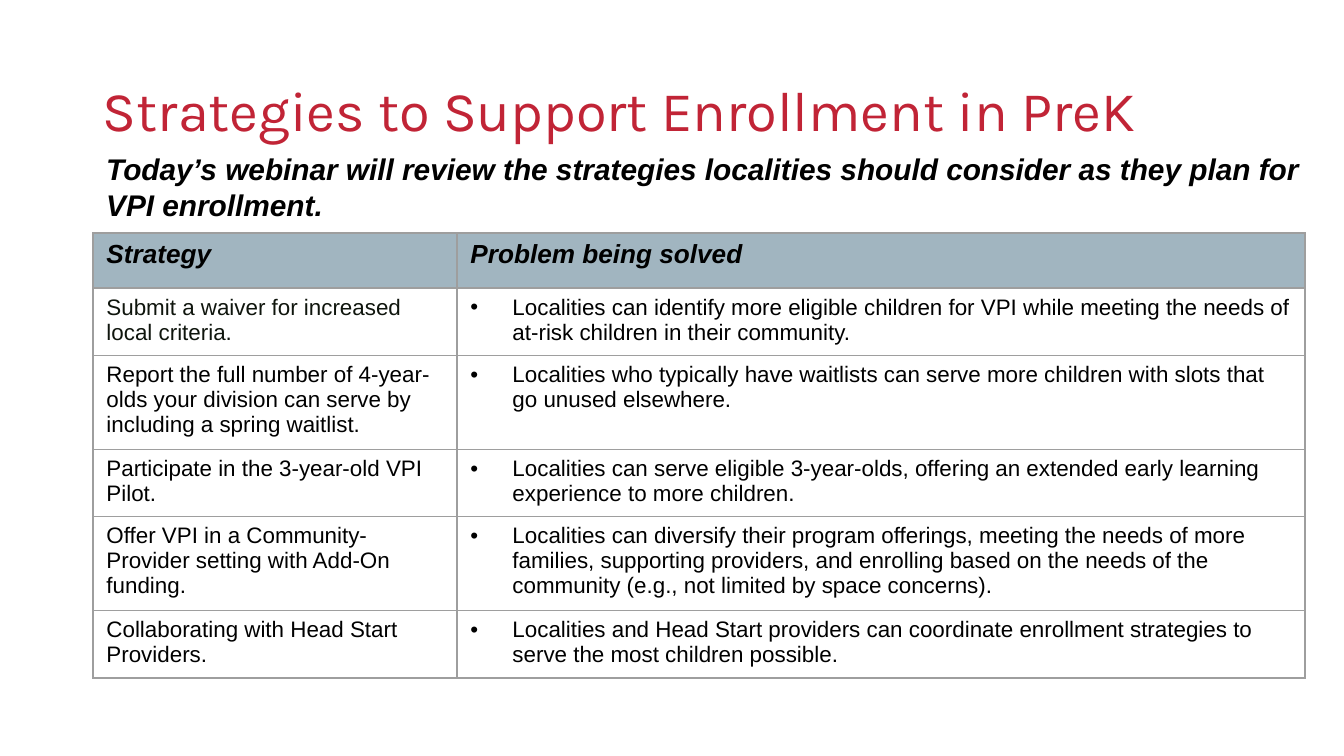
"""Build the slide on strategies to support PreK enrollment."""
import pptx
import pptx.dml.color
import pptx.enum.text
import pptx.oxml
import pptx.oxml.ns
import pptx.util

TITLE = "Strategies to Support Enrollment in PreK"
INTRO = (
    "Today’s webinar will review the strategies localities should consider "
    "as they plan for VPI enrollment."
)
HEADERS = ("Strategy", "Problem being solved")
STRATEGIES = [
    ("Submit a waiver for increased local criteria.",
     "Localities can identify more eligible children for VPI while meeting "
     "the needs of at-risk children in their community."),
    ("Report the full number of 4-year-olds your division can serve by "
     "including a spring waitlist.",
     "Localities who typically have waitlists can serve more children with "
     "slots that go unused elsewhere."),
    ("Participate in the 3-year-old VPI Pilot.",
     "Localities can serve eligible 3-year-olds, offering an extended early "
     "learning experience to more children."),
    ("Offer VPI in a Community-Provider setting with Add-On funding.",
     "Localities can diversify their program offerings, meeting the needs of "
     "more families, supporting providers, and enrolling based on the needs "
     "of the community (e.g., not limited by space concerns)."),
    ("Collaborating with Head Start Providers.",
     "Localities and Head Start providers can coordinate enrollment "
     "strategies to serve the most children possible."),
]
COLORS = {
    "title": "C12436",
    "text": "000000",
    "first_strategy": "0F150D",
    "header": "A1B5C0",
    "border": "9E9E9E",
}
LEFT = 93
COLUMN_WIDTHS = (364, 848)
ROW_HEIGHT = 55
BULLET_INDENT = 42


def px(length):
    return pptx.util.Emu(round(length * 914400 / 134.4))


def rgb(name):
    return pptx.dml.color.RGBColor.from_string(COLORS[name])


def write(text_frame, text, size, color="text", font="Arial", emphasis=False):
    text_frame.text = text
    paragraph = text_frame.paragraphs[0]
    run_font = paragraph.runs[0].font
    run_font.name = font
    run_font.size = pptx.util.Pt(size)
    run_font.bold = run_font.italic = emphasis
    run_font.color.rgb = rgb(color)
    return paragraph


def add_text(slide, left, top, width, height):
    text_frame = slide.shapes.add_textbox(
        px(left), px(top), px(width), px(height)).text_frame
    text_frame.word_wrap = True
    return text_frame


def add_element(parent, tag, content="", **attributes):
    values = " ".join(f'{key}="{value}"' for key, value in attributes.items())
    namespace = pptx.oxml.ns.nsdecls("a")
    parent.append(pptx.oxml.parse_xml(
        f"<a:{tag} {namespace} {values}>{content}</a:{tag}>"))


def add_borders(cell):
    properties = cell._tc.get_or_add_tcPr()
    fill = f'<a:solidFill><a:srgbClr val="{COLORS["border"]}"/></a:solidFill>'
    for side in "LRTB":
        add_element(properties, f"ln{side}", fill, w=pptx.util.Pt(0.75))


def add_bullet(paragraph):
    properties = paragraph._p.get_or_add_pPr()
    properties.set("marL", str(px(BULLET_INDENT)))
    properties.set("indent", str(-px(BULLET_INDENT)))
    add_element(properties, "buClr", f'<a:srgbClr val="{COLORS["text"]}"/>')
    add_element(properties, "buFont", typeface="Arial")
    add_element(properties, "buChar", char="•")


def add_strategy_table(slide):
    rows = [HEADERS, *STRATEGIES]
    table = slide.shapes.add_table(
        len(rows), len(HEADERS), px(LEFT), px(233),
        px(sum(COLUMN_WIDTHS)), px(ROW_HEIGHT * len(rows))).table
    table.horz_banding = table.first_row = False
    for column, width in zip(table.columns, COLUMN_WIDTHS):
        column.width = px(width)
    for row_index, row in enumerate(rows):
        table.rows[row_index].height = px(ROW_HEIGHT)
        for column_index, text in enumerate(row):
            cell = table.cell(row_index, column_index)
            add_borders(cell)
            if row_index == 0:
                cell.fill.solid()
                cell.fill.fore_color.rgb = rgb("header")
                write(cell.text_frame, text, 14, emphasis=True)
                continue
            cell.fill.background()
            is_first = (row_index, column_index) == (1, 0)
            color = "first_strategy" if is_first else "text"
            paragraph = write(cell.text_frame, text, 12, color)
            if column_index == 1:
                add_bullet(paragraph)


def main():
    presentation = pptx.Presentation()
    presentation.slide_width = px(1344)
    presentation.slide_height = px(756)
    slide = presentation.slides.add_slide(presentation.slide_layouts[6])

    title = add_text(slide, LEFT, 40, 1159, 146)
    title.vertical_anchor = pptx.enum.text.MSO_ANCHOR.MIDDLE
    title.margin_left = title.margin_right = px(10)
    title.margin_top = title.margin_bottom = px(5)
    write(title, TITLE, 30, "title", "Karla").line_spacing = 0.9

    write(add_text(slide, LEFT, 144, 1231, 149), INTRO, 16, emphasis=True)
    add_strategy_table(slide)
    presentation.save("out.pptx")


if __name__ == "__main__":
    main()
